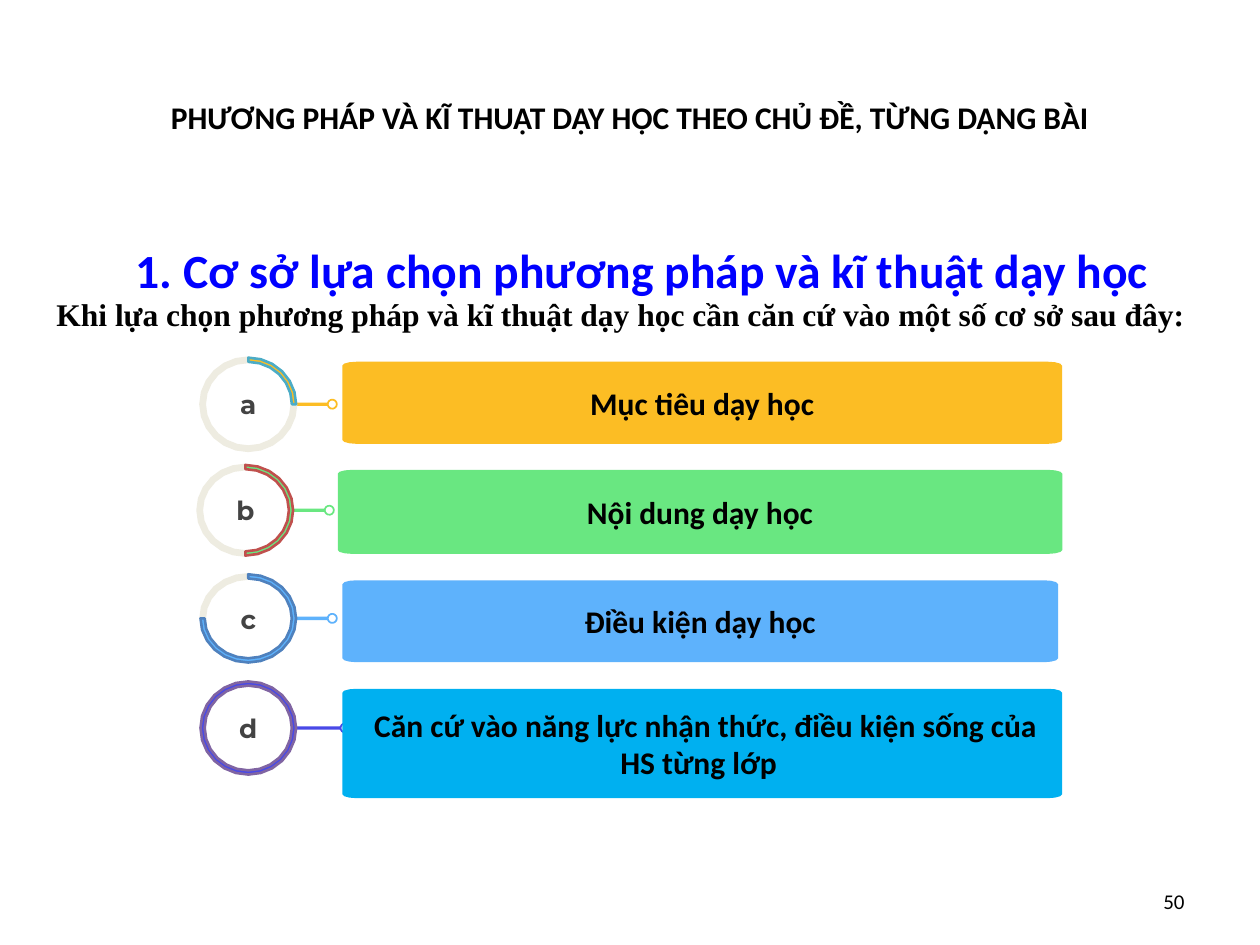
from math import cos, radians, sin

from lxml.etree import SubElement
from pptx import Presentation
from pptx.dml.color import RGBColor
from pptx.enum.text import MSO_ANCHOR, MSO_AUTO_SIZE, PP_ALIGN
from pptx.oxml.ns import qn
from pptx.util import Pt

BLACK = RGBColor(0x00, 0x00, 0x00)
BLUE = RGBColor(0x00, 0x00, 0xFF)
GREY = RGBColor(0x43, 0x43, 0x43)
CREAM = RGBColor(0xEE, 0xEC, 0xE1)
GOLD = RGBColor(0xFC, 0xBD, 0x24)
GREEN = RGBColor(0x69, 0xE7, 0x81)
SKY = RGBColor(0x5E, 0xB2, 0xFC)
CYAN = RGBColor(0x00, 0xB0, 0xF0)
INDIGO = RGBColor(0x49, 0x49, 0xE7)
TEAL = RGBColor(0x4B, 0xAC, 0xC6)
RED = RGBColor(0xC0, 0x50, 0x4D)
STEEL = RGBColor(0x4F, 0x81, 0xBD)
PURPLE = RGBColor(0x80, 0x64, 0xA2)

RADIUS = 27.3
BAND = 2.4
BOLD = {"name": "Calibri", "size": Pt(18), "bold": True}
MARK = {"name": "Montserrat", "size": Pt(15), "bold": True}
SERIF = {"name": "Times New Roman", "size": Pt(18), "bold": True}
HEAD = {"name": "Calibri", "size": Pt(27.2), "bold": True}
SMALL = {"name": "Calibri", "size": Pt(12), "bold": False}

# letter, text, ring centre x and y, ring height radius, sweep, knob offset,
# box (left, top, width, height), box fill, ring fill, ring line
ROWS = [
    ("d", " Căn cứ vào năng lực nhận thức, điều kiện sống của HS từng lớp ",
     141.9, 416, 26.6, 360, 55.3,
     (195.7, 393.6, 411.2, 62.5), CYAN, INDIGO, PURPLE),
    ("a", "Mục tiêu dạy học", 141.9, 231, 26.6, 90, 48,
     (195.7, 206.7, 411.2, 46.9), GOLD, GOLD, TEAL),
    ("b", "Nội dung dạy học", 140.2, 291.6, 25.9, 180, 48,
     (193, 268.5, 414, 48), GREEN, GREEN, RED),
    ("c", "Điều kiện dạy học", 141.9, 353.4, 25.2, 270, 48,
     (195.7, 331.6, 408.9, 46.8), SKY, SKY, STEEL),
]


def write(shape, text, style, color, align=PP_ALIGN.CENTER,
          anchor=MSO_ANCHOR.MIDDLE, inset=None):
    frame = shape.text_frame
    frame.text = text
    frame.word_wrap = True
    frame.auto_size = MSO_AUTO_SIZE.NONE
    frame.vertical_anchor = anchor
    if inset is not None:
        for side in ("left", "top", "right", "bottom"):
            setattr(frame, f"margin_{side}", Pt(inset))
    part = frame.paragraphs[0]
    part.alignment = align
    part.space_before = Pt(0)
    font = part.runs[0].font
    for key, value in style.items():
        setattr(font, key, value)
    font.color.rgb = color
    return part


def place(shape, *area):
    for key, value in zip(("left", "top", "width", "height"), area):
        setattr(shape, key, Pt(value))


def label(slide, area, text, style, color, **kwargs):
    box = slide.shapes.add_textbox(*map(Pt, area))
    return write(box, text, style, color, **kwargs)


def curve(x, y, rx, ry, start, end, step=15):
    """Points of an elliptic arc; angles run clockwise from the top."""
    count = round(abs(end - start) / step)
    turns = [radians(start + (end - start) * i / count) for i in range(count + 1)]
    return [(x + rx * sin(t), y - ry * cos(t)) for t in turns]


def outline(slide, loops, fill, line=None):
    """One closed shape; a second loop cuts a hole in the first."""
    build = None
    for loop in loops:
        first, *rest = [(Pt(x), Pt(y)) for x, y in loop]
        if build is None:
            build = slide.shapes.build_freeform(*first)
        else:
            build.move_to(*first)
        build.add_line_segments(rest, close=True)
    shape = build.convert_to_shape()
    shape.shadow.inherit = False
    shape.fill.solid()
    shape.fill.fore_color.rgb = fill
    if line is None:
        shape.line.fill.background()
    else:
        shape.line.color.rgb = line
        shape.line.width = Pt(1.5)
    return shape


def arc(slide, x, y, ry, start, end, fill, line):
    outer = curve(x, y, RADIUS, ry, start, end)
    inner = curve(x, y, RADIUS - BAND, ry - BAND, end, start)
    whole = end - start == 360
    loops = [outer[:-1], inner[:-1]] if whole else [outer + inner]
    outline(slide, loops, fill, line)


def ring(slide, x, y, ry, sweep, fill, line):
    if sweep < 360:
        arc(slide, x, y, ry, sweep, 360, CREAM, CREAM)
    arc(slide, x, y, ry, 0, sweep, fill, line)


def knob(slide, x, y, reach, color):
    """Short bar from the ring's edge that ends in a small open circle."""
    start, end = x + RADIUS - 0.8, x + reach
    rim = curve(end, y, 3.1, 3.1, 288, 612, 27)
    hole = curve(end, y, 2.1, 2.1, 360, 0, 30)[:-1]
    bar = [(start, rim[-1][1]), (start, rim[0][1])]
    outline(slide, [rim + bar, hole], color)


def panel(slide, area, text, fill):
    """Box whose corners are wider than they are high."""
    left, top, width, height = area
    rx, ry = 8, 2.2
    right, low = left + width - rx, top + height - ry
    spots = [(right, top + ry), (right, low), (left + rx, low), (left + rx, top + ry)]
    points = [p for i, (x, y) in enumerate(spots)
              for p in curve(x, y, rx, ry, 90 * i, 90 * i + 90, 30)]
    box = outline(slide, [points], fill)
    write(box, text, BOLD, BLACK, inset=5)


def row(slide, letter, text, x, y, ry, sweep, reach, area, fill, tint, line):
    knob(slide, x, y, reach, tint)
    ring(slide, x, y, ry, sweep, tint, line)
    panel(slide, area, text, fill)
    label(slide, (x - RADIUS, y - 11.7, 2 * RADIUS, 23.5), letter, MARK, GREY, inset=5)


def main():
    deck = Presentation()
    deck.slide_width, deck.slide_height = Pt(720), Pt(540)
    slide = deck.slides.add_slide(deck.slide_layouts[1])

    title, body = slide.placeholders
    place(title, 36, 21.6, 648, 90)
    write(title, "PHƯƠNG PHÁP VÀ KĨ THUẬT DẠY HỌC THEO CHỦ ĐỀ, TỪNG DẠNG BÀI",
          BOLD, BLACK)
    place(body, 70.4, 134.3, 620.6, 37.4)
    part = write(body, "1. Cơ sở lựa chọn phương pháp và kĩ thuật dạy học",
                 HEAD, BLUE, PP_ALIGN.LEFT, MSO_ANCHOR.TOP)
    props = part._p.get_or_add_pPr()
    props.set("marL", "0")
    props.set("indent", "0")
    SubElement(props, qn("a:buNone"))

    label(slide, (516.2, 500.4, 167.8, 28.8), "50", SMALL, BLACK, align=PP_ALIGN.RIGHT)
    lead = label(slide, (25.2, 159.1, 671.8, 35.3),
                 "Khi lựa chọn phương pháp và kĩ thuật dạy học cần căn cứ vào "
                 "một số cơ sở sau đây:",
                 SERIF, BLACK, align=PP_ALIGN.LEFT, anchor=MSO_ANCHOR.TOP)
    lead.line_spacing = 1.27
    for item in ROWS:
        row(slide, *item)
    deck.save("out.pptx")


if __name__ == "__main__":
    main()
